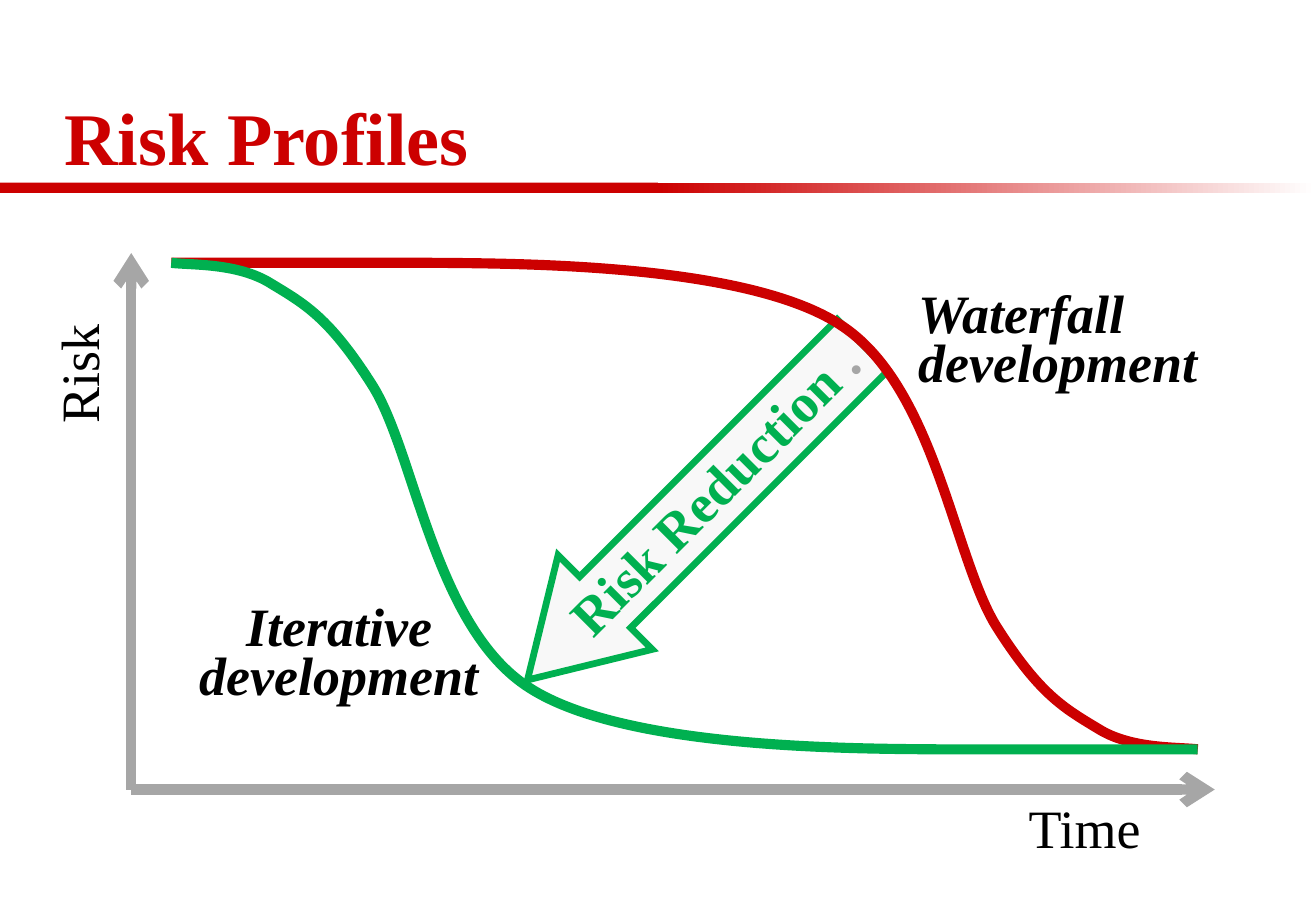
from lxml.etree import SubElement
from pptx import Presentation
from pptx.dml.color import RGBColor
from pptx.enum.shapes import MSO_CONNECTOR, MSO_SHAPE
from pptx.enum.text import MSO_ANCHOR, PP_ALIGN
from pptx.oxml.ns import qn
from pptx.util import Pt

RED, GREEN, GREY, PALE = "CC0000", "00B050", "A6A6A6", "F8F8F8"
LEFT, MID = PP_ALIGN.LEFT, PP_ALIGN.CENTER


def color(code):
    return RGBColor.from_string(code)


class Board:
    font = "Times New Roman"

    def __init__(self, slide):
        self.shapes = slide.shapes

    def style(self, run, size, code, bold=False, slant=False):
        font = run.font
        font.name, font.size = self.font, Pt(size)
        font.bold, font.italic = bold, slant
        font.color.rgb = color(code)

    def stroke(self, item, code, width, tag, **attrs):
        """Line colour and width, with a join or an arrowhead."""
        item.line.color.rgb = color(code)
        item.line.width = Pt(width)
        line = item._element.spPr.find(qn("a:ln"))
        SubElement(line, qn(tag), **attrs)

    def shape(self, kind, box, fill):
        item = self.shapes.add_shape(kind, *map(Pt, box))
        item.shadow.inherit = False
        item.fill.solid()
        item.fill.fore_color.rgb = color(fill)
        item.line.fill.background()
        return item

    def fade(self, box, start, end):
        item = self.shape(MSO_SHAPE.RECTANGLE, box, start)
        item.fill.gradient()
        item.fill.gradient_angle = 0
        for stop, code in zip(item.fill.gradient_stops, (start, end)):
            stop.color.rgb = color(code)

    def title(self, text, box):
        frame = self.shapes.add_textbox(*map(Pt, box)).text_frame
        frame.word_wrap = True
        frame.vertical_anchor = MSO_ANCHOR.BOTTOM
        frame.text = text
        frame.paragraphs[0].line_spacing = 0.9
        self.style(frame.paragraphs[0].runs[0], 44, RED, True)

    def label(self, text, box, align=MID, strong=False, turn=0):
        item = self.shapes.add_textbox(*map(Pt, box))
        item.rotation = turn
        frame = item.text_frame
        frame.word_wrap = False
        frame.margin_left = frame.margin_right = Pt(8.64 if strong else 0)
        frame.margin_top = frame.margin_bottom = Pt(4.32 if strong else 3.6)
        frame.text = text
        for para in frame.paragraphs:
            para.alignment = align
            para.line_spacing, para.space_before = Pt(20), Pt(9)
            self.style(para.runs[0], 32, "000000", strong, strong)

    def axis(self, start, end):
        line = self.shapes.add_connector(
            MSO_CONNECTOR.STRAIGHT, *map(Pt, (*start, *end)))
        self.stroke(line, GREY, 6, "a:tailEnd", type="arrow")
        SubElement(line._element.spPr, qn("a:effectLst"))

    def curve(self, dots, code, turn=0):
        """A straight start, then cubic curves of three points each."""
        dots = [(x * 100, y * 100) for x, y in dots]
        pen = self.shapes.build_freeform(*dots[0], scale=Pt(1) / 100)
        pen.add_line_segments(dots[1:], close=False)
        item = pen.convert_to_shape()
        item.shadow.inherit = False
        item.fill.background()
        item.rotation = turn
        self.stroke(item, code, 6, "a:round")
        route = next(item._element.iter(qn("a:path")))
        legs = route.findall(qn("a:lnTo"))[1:]
        for i in range(0, len(legs), 3):
            cubic = SubElement(route, qn("a:cubicBezTo"))
            for leg in legs[i:i + 3]:
                cubic.append(leg[0])
                route.remove(leg)

    def arrow(self, parts, box, turn):
        item = self.shape(MSO_SHAPE.LEFT_ARROW, box, PALE)
        item.adjustments[0], item.adjustments[1] = 0.542, 0.825
        item.rotation = turn
        self.stroke(item, GREEN, 4, "a:miter", lim="800000")
        frame = item.text_frame
        frame.word_wrap = False
        frame.vertical_anchor = MSO_ANCHOR.MIDDLE
        para = frame.paragraphs[0]
        para.alignment, para.line_spacing = MID, 0.9
        for text, code in parts:
            run = para.add_run()
            run.text = text
            self.style(run, 32, code, True)


def main():
    deck = Presentation()
    deck.slide_width, deck.slide_height = Pt(780), Pt(540)
    board = Board(deck.slides.add_slide(deck.slide_layouts[6]))

    # Heading and rule
    board.shape(MSO_SHAPE.RECTANGLE, (0, 108.3, 390, 6), RED)
    board.fade((390, 108.3, 390, 6), RED, "FFFFFF")
    board.title("Risk Profiles", (31, 24, 714, 87))

    # Arrow between the curves
    board.arrow([("Risk Reduction", GREEN), (" .", GREY)],
                (271.5, 264.25, 281, 79), 315)

    # Axes
    base = (77.8, 468)
    board.axis(base, (720, 468))
    board.label("Time", (602.2, 486, 81.4, 30))
    board.axis(base, (77.8, 150))
    board.label("Risk", (27.2, 203, 66.2, 37.4), turn=270)

    # Curves: the green one is the red one turned by half
    board.label("Waterfall\ndevelopment", (535.7, 180, 184.3, 60.5), LEFT, True)
    fall = [(101.5, 155.8), (252.7, 155.8),
            (308.2, 156.2), (441.4, 156.2), (497.5, 192.2),
            (554.4, 228.2), (565.2, 331.9), (591.1, 372.2),
            (616.3, 411.8), (630.7, 419.8), (650.9, 432),
            (670.3, 444.2), (697.7, 442.8), (709.9, 444.2)]
    board.curve(fall, RED)
    board.curve(fall, GREEN, 180)
    board.label("Iterative\ndevelopment", (109, 365.4, 184.3, 60.5), MID, True)

    deck.save("out.pptx")


if __name__ == "__main__":
    main()
